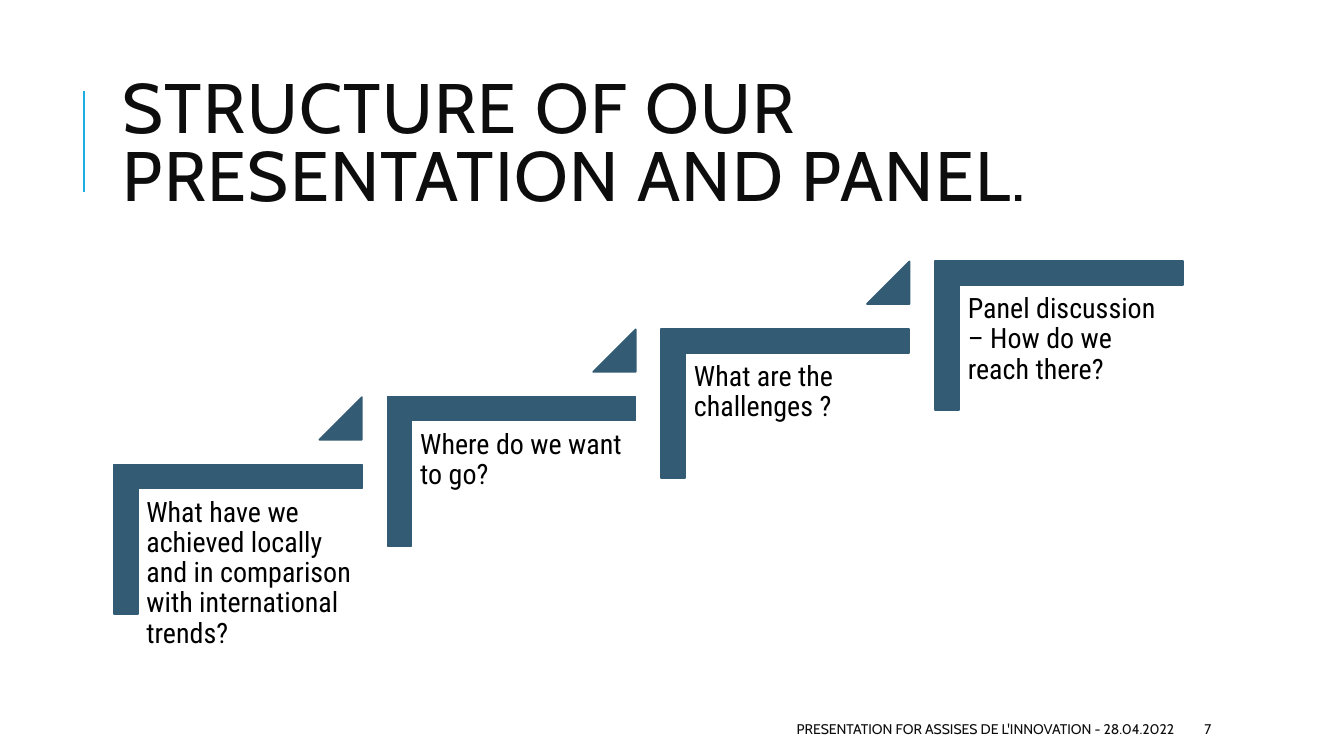
from pptx import Presentation
from pptx.dml.color import RGBColor
from pptx.enum.shapes import MSO_CONNECTOR, MSO_SHAPE
from pptx.enum.text import MSO_ANCHOR, MSO_AUTO_SIZE, PP_ALIGN
from pptx.oxml.ns import qn
from pptx.util import Cm, Pt
from lxml import etree

TITLE = "STRUCTURE OF OUR PRESENTATION AND PANEL."
STEPS = [
    "What have we achieved locally and in comparison with international trends?",
    "Where do we want to go?",
    "What are the challenges ?",
    "Panel discussion – How do we reach there?",
]
FOOTER = "PRESENTATION FOR ASSISES DE L'INNOVATION - 28.04.2022"
PAGE = "7"

TITLE_FONT, STEP_FONT = "Cabin", "Roboto Condensed"
STEEL = RGBColor(0x33, 0x5B, 0x74)
SKY = RGBColor(0x1C, 0xAD, 0xE4)
INK = RGBColor(0x0D, 0x0D, 0x0D)
BLACK = RGBColor(0, 0, 0)
LEFT, RIGHT = PP_ALIGN.LEFT, PP_ALIGN.RIGHT
TOP, MIDDLE = MSO_ANCHOR.TOP, MSO_ANCHOR.MIDDLE
CORNER, TRIANGLE = MSO_SHAPE.CORNER, MSO_SHAPE.ISOSCELES_TRIANGLE
STRAIGHT = MSO_CONNECTOR.STRAIGHT
NO_FIT = MSO_AUTO_SIZE.NONE

STEP_DX, STEP_DY = 6.9, -1.71
CORNER_BOX = (4.11, 10.46, 3.76, 6.25)
TEXT_BOX = (3.48, 12.34, 5.64, 4.95)
TRIANGLE_BOX = (8.05, 10.01, 1.07, 1.07)
INSET = 0.21


def place(box, i):
    x, y, w, h = box
    return Cm(x + i * STEP_DX), Cm(y + i * STEP_DY), Cm(w), Cm(h)


def add_solid(slide, kind, box, adjustments, rotation=0):
    sp = slide.shapes.add_shape(kind, *box)
    sp.shadow.inherit = False
    sp.rotation = rotation
    for n, value in enumerate(adjustments):
        sp.adjustments[n] = value
    sp.fill.solid()
    sp.fill.fore_color.rgb = STEEL
    sp.line.color.rgb = STEEL
    sp.line.width = Pt(1.25)


def write(sp, text, font, size, color, align=LEFT, anchor=MIDDLE, spacing=1.0):
    tf = sp.text_frame
    tf.word_wrap = True
    tf.auto_size = NO_FIT
    tf.vertical_anchor = anchor
    p = tf.paragraphs[0]
    p.text = text
    p.alignment = align
    p.line_spacing = spacing
    p.font.name = font
    p.font.size = Pt(size)
    p.font.color.rgb = color
    return tf


prs = Presentation()
prs.slide_width, prs.slide_height = Cm(33.87), Cm(19.05)
slide = prs.slides.add_slide(prs.slide_layouts[5])

rule = slide.shapes.add_connector(STRAIGHT, Cm(2.12), Cm(4.83), Cm(2.12), Cm(2.29))
rule.line.color.rgb = SKY
rule.line.width = Pt(1.5)
etree.SubElement(rule._element.spPr, qn("a:effectLst"))

title = slide.shapes.title
title.left, title.top, title.width, title.height = Cm(2.84), Cm(1.63), Cm(27), Cm(4.17)
tf = write(title, TITLE, TITLE_FONT, 50, INK, spacing=0.8)
tf.paragraphs[0].runs[0].font._element.set("spc", "100")

for i, step in enumerate(STEPS):
    add_solid(slide, CORNER, place(CORNER_BOX, i), (0.161, 0.161), 90)
    sp = slide.shapes.add_textbox(*place(TEXT_BOX, i))
    tf = write(sp, step, STEP_FONT, 20, BLACK, anchor=TOP, spacing=0.9)
    tf.margin_left = tf.margin_right = tf.margin_top = tf.margin_bottom = Cm(INSET)
    if i < len(STEPS) - 1:
        add_solid(slide, TRIANGLE, place(TRIANGLE_BOX, i), (1,))

for text, x, w, align in ((FOOTER, 13.46, 16.38, RIGHT), (PAGE, 30.1, 2.69, LEFT)):
    sp = slide.shapes.add_textbox(Cm(x), Cm(17.98), Cm(w), Cm(0.76))
    write(sp, text, TITLE_FONT, 10, INK, align)

prs.save("out.pptx")
